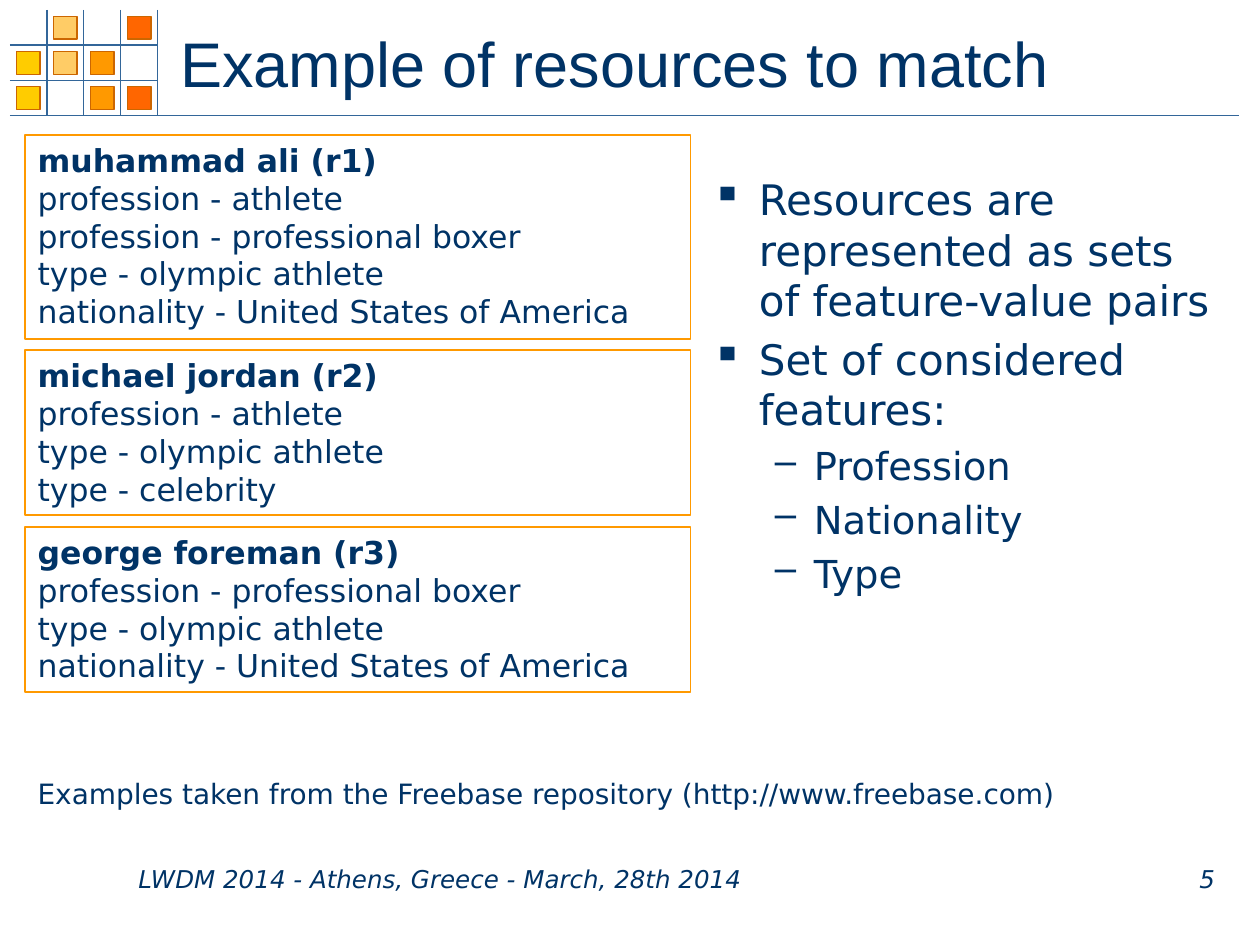
from dataclasses import dataclass

from lxml.etree import SubElement
from pptx import Presentation
from pptx.dml.color import RGBColor
from pptx.enum.shapes import MSO_CONNECTOR as Connector, MSO_SHAPE as Shape
from pptx.enum.text import MSO_ANCHOR as Anchor, MSO_AUTO_SIZE as AutoSize, PP_ALIGN as Align
from pptx.oxml.ns import qn
from pptx.util import Cm, Pt

NAVY, ORANGE, STEEL, RUST = "003366", "FF9900", "336699", "CC6600"
BODY_FONT = "DejaVu Sans"


@dataclass
class Resource:
    top: float
    height: float
    name: str
    features: list[str]


@dataclass
class Caption:
    left: float
    top: float
    width: float
    height: float
    text: str
    size: float
    italic: bool = False
    align: Align = Align.LEFT


@dataclass
class BulletStyle:
    sign: str
    indent: float
    hanging: float
    size: float


@dataclass
class Bullet:
    text: str
    level: int = 0


RESOURCES = [
    Resource(2.72, 4.11, "muhammad ali (r1)", [
        "profession - athlete", "profession - professional boxer",
        "type - olympic athlete", "nationality - United States of America"]),
    Resource(7.06, 3.33, "michael jordan (r2)", [
        "profession - athlete", "type - olympic athlete", "type - celebrity"]),
    Resource(10.62, 3.33, "george foreman (r3)", [
        "profession - professional boxer", "type - olympic athlete",
        "nationality - United States of America"]),
]
BULLETS = [
    Bullet("Resources are represented as sets of feature-value pairs"),
    Bullet("Set of considered features:"),
    Bullet("Profession", 1), Bullet("Nationality", 1), Bullet("Type", 1),
]
BULLET_STYLES = [BulletStyle("▪", 0.95, 0.95, 24), BulletStyle("–", 2.06, 0.79, 22)]
CAPTIONS = [
    Caption(0.51, 15.52, 24, 0.94,
            "Examples taken from the Freebase repository (http://www.freebase.com)", 16),
    Caption(2.54, 17.3, 17.96, 0.84, "LWDM 2014 - Athens, Greece - March, 28th 2014", 14, True),
    Caption(23.7, 17.3, 1.27, 0.84, "5", 14, True, Align.CENTER),
]
# Colours of the corner mosaic, row by row; None is an empty cell
MOSAIC = [
    [None, "FFCC66", None, "FF6600"],
    ["FFCC00", "FFCC66", "FF9900", None],
    ["FFCC00", None, "FF9900", "FF6600"],
]
GRID_START, COLUMN_STEP, ROW_STEP = 0.2, 0.745, 0.71


def rgb(value: str) -> RGBColor:
    return RGBColor.from_string(value)


def style_font(font, size: float, name: str = BODY_FONT, bold=False, italic=False) -> None:
    font.size, font.name, font.bold, font.italic = Pt(size), name, bold, italic
    font.color.rgb = rgb(NAVY)


def draw_rule(page, x1: float, y1: float, x2: float, y2: float) -> None:
    rule = page.shapes.add_connector(Connector.STRAIGHT, Cm(x1), Cm(y1), Cm(x2), Cm(y2))
    rule.line.color.rgb = rgb(STEEL)
    rule.line.width = Pt(0.75)
    SubElement(rule._element.spPr, qn("a:effectLst"))


def draw_rectangle(page, left: float, top: float, width: float, height: float,
                   outline: str, weight: float, fill: str | None = None):
    box = page.shapes.add_shape(Shape.RECTANGLE, Cm(left), Cm(top), Cm(width), Cm(height))
    box.shadow.inherit = False
    if fill:
        box.fill.solid()
        box.fill.fore_color.rgb = rgb(fill)
    else:
        box.fill.background()
    box.line.color.rgb = rgb(outline)
    box.line.width = Pt(weight)
    return box


def draw_mosaic(page) -> None:
    right = GRID_START + 4 * COLUMN_STEP
    bottom = GRID_START + 3 * ROW_STEP
    draw_rule(page, GRID_START, bottom, 24.97, bottom)
    for row, colors in enumerate(MOSAIC):
        for column, color in enumerate(colors):
            if color:
                draw_rectangle(page, 0.33 + column * COLUMN_STEP, 0.33 + row * ROW_STEP,
                               0.48, 0.46, RUST, 0.75, color)
    for column in range(1, 5):
        x = GRID_START + column * COLUMN_STEP
        draw_rule(page, x, GRID_START, x, bottom)
    for row in range(1, 3):
        y = GRID_START + row * ROW_STEP
        draw_rule(page, GRID_START, y, right, y)


def draw_title(page, text: str) -> None:
    title = page.shapes.title
    title.left, title.top, title.width, title.height = Cm(3.38), Cm(0.2), Cm(21.59), Cm(2.11)
    frame = title.text_frame
    frame.text = text
    frame.auto_size = AutoSize.NONE
    frame.vertical_anchor = Anchor.MIDDLE
    para = frame.paragraphs[0]
    para.alignment = Align.LEFT
    style_font(para.runs[0].font, 36, "Arial")


def draw_resource(page, resource: Resource) -> None:
    box = draw_rectangle(page, 0.51, resource.top, 13.41, resource.height, ORANGE, 1)
    frame = box.text_frame
    frame.vertical_anchor = Anchor.TOP
    frame.text = "\n".join([resource.name, *resource.features])
    for index, para in enumerate(frame.paragraphs):
        para.alignment = Align.LEFT
        style_font(para.runs[0].font, 18, bold=index == 0)


def add_text_box(page, left: float, top: float, width: float, height: float, text: str):
    box = page.shapes.add_textbox(Cm(left), Cm(top), Cm(width), Cm(height))
    box.text_frame.word_wrap = True
    box.text_frame.text = text
    return box.text_frame


def draw_caption(page, caption: Caption) -> None:
    frame = add_text_box(page, caption.left, caption.top, caption.width,
                         caption.height, caption.text)
    para = frame.paragraphs[0]
    para.alignment = caption.align
    style_font(para.runs[0].font, caption.size, italic=caption.italic)


def draw_bullets(page, bullets: list[Bullet]) -> None:
    frame = add_text_box(page, 14.1, 3.38, 10.8, 10.54,
                         "\n".join(bullet.text for bullet in bullets))
    for index, (para, bullet) in enumerate(zip(frame.paragraphs, bullets)):
        style = BULLET_STYLES[bullet.level]
        para.level = bullet.level
        para.space_before = Pt(0.2 * style.size if index else 0)
        properties = para._p.get_or_add_pPr()
        properties.set("marL", str(Cm(style.indent)))
        properties.set("indent", str(-Cm(style.hanging)))
        SubElement(properties, qn("a:buChar")).set("char", style.sign)
        style_font(para.runs[0].font, style.size)


def main() -> None:
    deck = Presentation()
    deck.slide_width, deck.slide_height = Cm(25.4), Cm(19.05)
    page = deck.slides.add_slide(deck.slide_layouts[5])
    draw_mosaic(page)
    draw_title(page, "Example of resources to match")
    draw_bullets(page, BULLETS)
    for resource in RESOURCES:
        draw_resource(page, resource)
    for caption in CAPTIONS:
        draw_caption(page, caption)
    deck.save("out.pptx")


if __name__ == "__main__":
    main()
